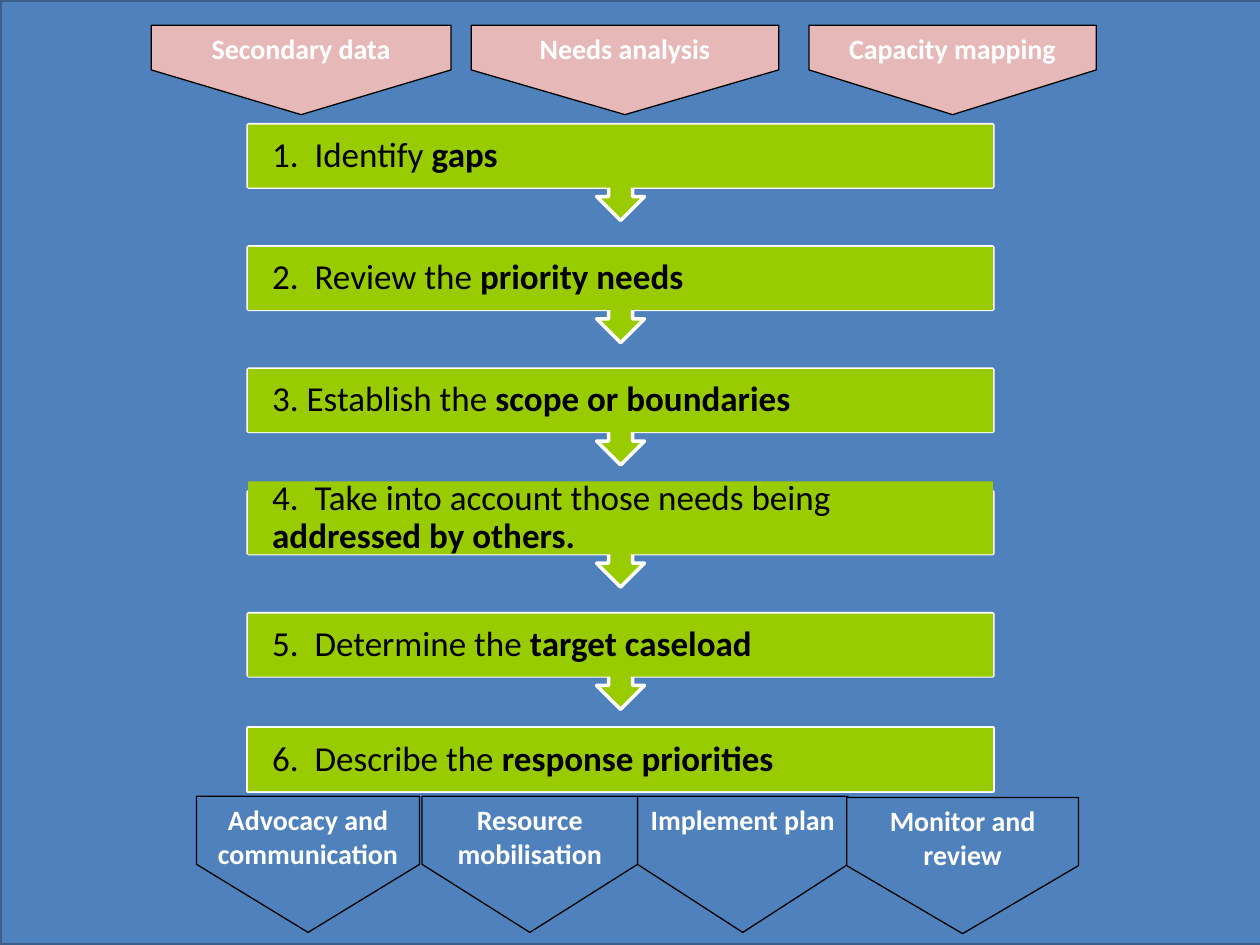
import pptx
import pptx.dml.color
import pptx.enum.shapes
import pptx.enum.text
import pptx.util
from pptx.util import Inches

KIND = pptx.enum.shapes.MSO_SHAPE
ANCHOR = pptx.enum.text.MSO_ANCHOR
ALIGN = pptx.enum.text.PP_ALIGN
BLUE, GREEN, PINK = "4F81BD", "99CC00", "E6B9B8"
WHITE, BLACK = "FFFFFF", "000000"

STEPS = [
    ("1.  Identify ", "gaps"),
    ("2.  Review the ", "priority needs"),
    ("3. Establish the ", "scope or boundaries"),
    ("4.  Take into account those needs being ", "addressed by others."),
    ("5.  Determine the ", "target caseload"),
    ("6.  Describe the ", "response priorities"),
]
INPUTS = [
    ("Secondary data", 1.2, 2.38),
    ("Needs analysis", 3.74, 2.44),
    ("Capacity mapping", 6.42, 2.28),
]
RESULTS = [
    ("Implement plan", 5.06, 6.32, 1.67),
    ("Monitor and review", 6.72, 6.33, 1.84),
    ("Resource mobilisation", 3.35, 6.32, 1.71),
    ("Advocacy and communication", 1.56, 6.32, 1.77),
]


def rgb(code):
    """Turn a hex string into a colour."""
    return pptx.dml.color.RGBColor.from_string(code)


def add_box(shapes, kind, left, top, width, height, fill, line=None, weight=2):
    """Add a flat filled shape, outlined when a line colour is given."""
    box = shapes.add_shape(kind, Inches(left), Inches(top), Inches(width), Inches(height))
    box.shadow.inherit = False
    box.fill.solid()
    box.fill.fore_color.rgb = rgb(fill)
    if line:
        box.line.color.rgb = rgb(line)
        box.line.width = pptx.util.Pt(weight)
    else:
        box.line.fill.background()
    return box


def style(run, size, code, bold):
    """Set the font of a run."""
    run.font.name = "Calibri"
    run.font.size = pptx.util.Pt(size)
    run.font.color.rgb = rgb(code)
    run.font.bold = bold


def add_step(shapes, top, lead, key, last=False, rise=0):
    """Add one step, with an arrow to the next unless it is the last."""
    left, width, height = 1.97, 5.91, 0.5
    group = shapes.add_group_shape().shapes
    if last:
        add_box(group, KIND.RECTANGLE, left, top, width, height, GREEN, WHITE)
    else:
        arrow = add_box(group, KIND.UP_ARROW_CALLOUT, left, top, width, 0.76, GREEN, WHITE)
        arrow.rotation = 180
    label = add_box(group, KIND.RECTANGLE, left, top - rise, width, height + rise, GREEN)
    frame = label.text_frame
    frame.word_wrap = True
    frame.vertical_anchor = ANCHOR.MIDDLE
    frame.margin_left = frame.margin_right = Inches(0.19)
    frame.margin_top = frame.margin_bottom = Inches(0.19)
    para = frame.paragraphs[0]
    para.alignment = ALIGN.LEFT
    para.line_spacing = 0.9
    for text, bold in ((lead, False), (key, True)):
        run = para.add_run()
        run.text = text
        style(run, 20, BLACK, bold)


def add_tag(shapes, text, left, top, width, height, fill):
    """Add a pentagon that points down and holds upright text."""
    shift = (width - height) / 2
    tag = add_box(shapes, KIND.PENTAGON, left + shift, top - shift,
                  height, width, fill, BLACK, 0.75)
    tag.rotation = 90
    frame = tag.text_frame
    frame.text = text
    frame.word_wrap = True
    frame.vertical_anchor = ANCHOR.TOP
    frame._txBody.bodyPr.set("vert", "vert270")
    para = frame.paragraphs[0]
    para.alignment = ALIGN.CENTER
    style(para.runs[0], 16, WHITE, True)


def main():
    """Build the slide and save it."""
    deck = pptx.Presentation()
    deck.slide_width, deck.slide_height = Inches(10), Inches(7.5)
    shapes = deck.slides.add_slide(deck.slide_layouts[6]).shapes
    add_box(shapes, KIND.RECTANGLE, 0, 0, 10.12, 7.5, BLUE, "3A5F8C")
    add_step(shapes, 5.78, *STEPS[-1], last=True)
    for i in reversed(range(len(STEPS) - 1)):
        add_step(shapes, 0.99 + 0.97 * i, *STEPS[i], rise=0.08 if i == 3 else 0)
    for text, left, top, width in RESULTS:
        add_tag(shapes, text, left, top, width, 1.08, BLUE)
    for text, left, width in INPUTS:
        add_tag(shapes, text, left, 0.2, width, 0.71, PINK)
    deck.save("out.pptx")


if __name__ == "__main__":
    main()
